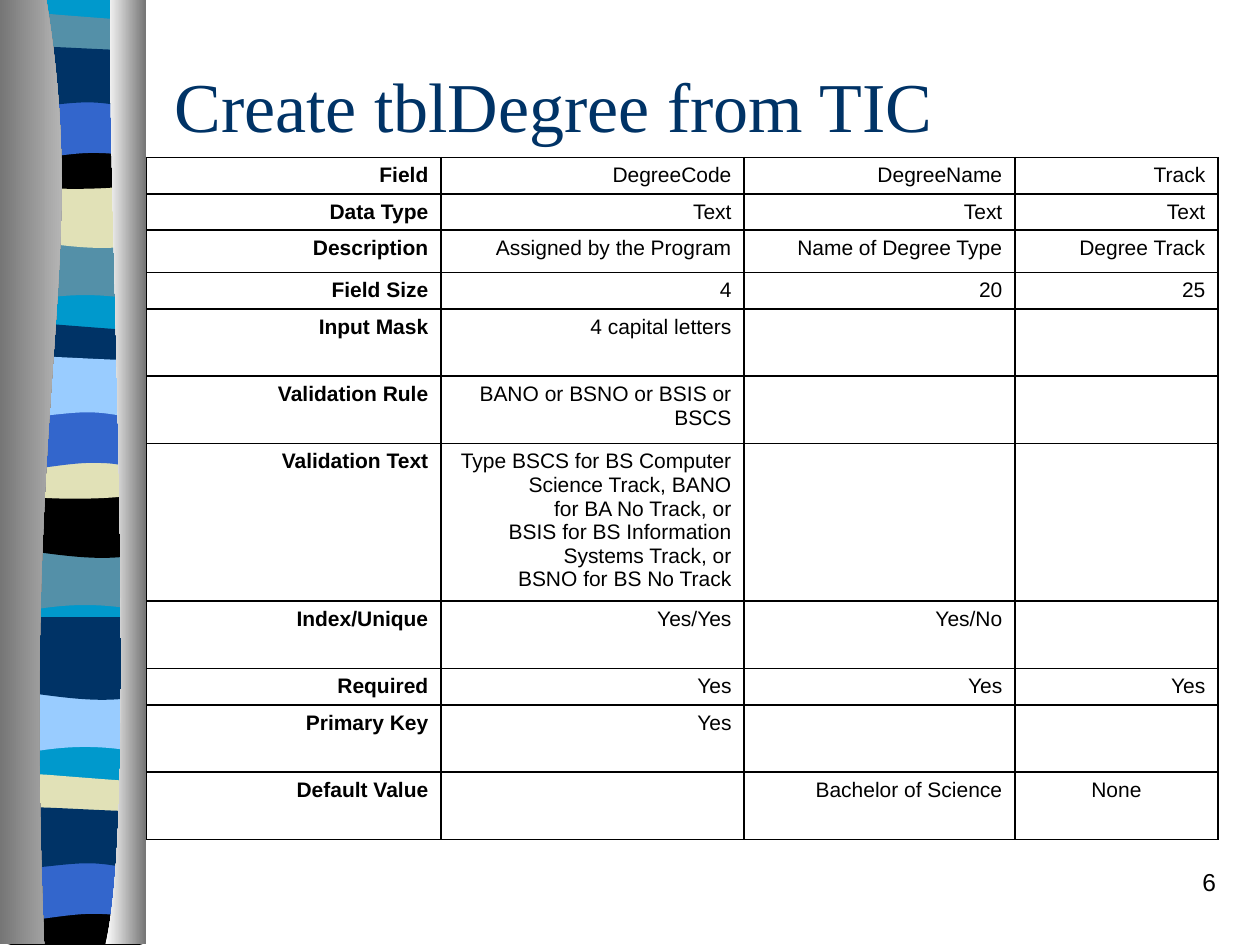
from typing import NamedTuple

from lxml.etree import SubElement
from pptx import Presentation
from pptx.dml.color import RGBColor
from pptx.enum.text import MSO_ANCHOR, MSO_AUTO_SIZE, PP_ALIGN
from pptx.oxml.ns import qn
from pptx.util import Pt

BLACK = RGBColor(0x00, 0x00, 0x00)
WHITE = RGBColor(0xFF, 0xFF, 0xFF)
LIGHT_GREY = RGBColor(0xD3, 0xD3, 0xD3)
GREY = RGBColor(0x76, 0x76, 0x76)
NAVY = RGBColor(0x00, 0x33, 0x66)
BLUE = RGBColor(0x33, 0x66, 0xCC)
SKY = RGBColor(0x99, 0xCC, 0xFF)
CYAN = RGBColor(0x00, 0x99, 0xCC)
TEAL = RGBColor(0x54, 0x90, 0xA8)
CREAM = RGBColor(0xE1, 0xE1, 0xB7)

UNITS_PER_POINT = 100
SHORT_ROW, TALL_ROW = 20.75, 38.5
HANGING = 27

Outline = list[tuple[float, ...]]


class Band(NamedTuple):
    """A wavy band: 2 numbers are a line end, 6 are a cubic curve."""
    outline: Outline
    shifts: tuple[float, ...]
    colours: tuple[RGBColor, ...]


class FieldRow(NamedTuple):
    height: float
    label: str
    code: str = ""
    name: str = ""
    track: str = ""


UPPER_SHIFTS = (0, 177.1, 258.2)
LOWER_SHIFTS = (0, 177.1, 434.8)

BANDS = [
    Band([(82, 133), (82, 172), (50, 166, 30, 169, 4, 174), (4, 133)],
         UPPER_SHIFTS, (TEAL, TEAL, SKY)),
    Band([(82, 94.4), (82, 139.5), (58, 144, 40, 141, 4, 136), (4, 94.4)],
         UPPER_SHIFTS, (CREAM, BLACK, NAVY)),
    Band([(82, 12), (82, 36), (69, 39, 17, 39, 4, 36), (4, 9),
          (9, 7, 21, 7.3, 34, 8.5), (47, 9.5, 72, 11.5, 82, 12)],
         LOWER_SHIFTS, (TEAL, NAVY, CREAM)),
    Band([(82, 77.8), (82, 104.5), (69, 109, 17, 109, 4, 104.5), (4, 77.8),
          (52, 81.4, 65.5, 77.8, 82, 77.8)],
         LOWER_SHIFTS, (BLACK, CREAM, BLACK)),
    Band([(82, 53.3), (82, 93), (70, 88, 65, 87.4, 52, 87.4),
          (39, 87.4, 16, 92, 4, 92.5), (4, 53.3)],
         LOWER_SHIFTS, (BLUE, BLUE, BLUE)),
    Band([(82, 28.8), (82, 61.5), (74, 62.5, 65, 58.5, 50, 58.5),
          (36, 58.5, 16, 62.5, 4, 61.5), (4, 27), (15, 25, 57, 28.8, 82, 28.8)],
         LOWER_SHIFTS, (NAVY, SKY, NAVY)),
]
BACKDROP = [(82, 0), (82, 539), (4, 539), (4, 0)]
LEFT_COLUMN = [(26.5, 0), (52, 156, 12, 213, 25.25, 539.5), (0, 539.5), (0, 0)]
RIGHT_COLUMN = [(63.25, 0), (60.5, 90, 80, 465, 60.25, 539.5), (83.25, 539.5), (83.25, 0)]

COLUMN_WIDTHS = (168.25, 173.25, 154.75, 116)
ROWS = [
    FieldRow(SHORT_ROW, "Field", "DegreeCode", "DegreeName", "Track"),
    FieldRow(SHORT_ROW, "Data Type", "Text", "Text", "Text"),
    FieldRow(24.25, "Description", "Assigned by the Program",
             "Name of Degree Type", "Degree Track"),
    FieldRow(SHORT_ROW, "Field Size", "4", "20", "25"),
    FieldRow(TALL_ROW, "Input Mask", "4 capital letters"),
    FieldRow(TALL_ROW, "Validation Rule", "BANO or BSNO or BSIS or BSCS"),
    FieldRow(88, "Validation Text",
             "Type BSCS for BS Computer Science Track, BANO for BA No Track, or "
             "BSIS for BS Information Systems Track, or BSNO for BS No Track"),
    FieldRow(TALL_ROW, "Index/Unique", "Yes/Yes", "Yes/No"),
    FieldRow(SHORT_ROW, "Required", "Yes", "Yes", "Yes"),
    FieldRow(TALL_ROW, "Primary Key", "Yes"),
    FieldRow(TALL_ROW, "Default Value", "", "Bachelor of Science", "None"),
]


def bend_curves(sp, outline: Outline) -> None:
    """Join each three line ends that stand for a cubic into one curve."""
    lines = iter(list(sp._element.iter(qn("a:lnTo"))))
    for segment in outline[1:]:
        line = next(lines)
        if len(segment) == 2:
            continue
        line.tag = qn("a:cubicBezTo")
        for _ in range(2):
            extra = next(lines)
            line.append(extra[0])
            extra.getparent().remove(extra)


def add_outline(s, outline: Outline, colours: tuple[RGBColor, ...], dy: float = 0) -> None:
    """Draw a closed outline; two colours make a left-to-right gradient."""
    start, *rest = [(segment[i] * UNITS_PER_POINT, (segment[i + 1] + dy) * UNITS_PER_POINT)
                    for segment in outline for i in range(0, len(segment), 2)]
    builder = s.shapes.build_freeform(*start, scale=Pt(1) / UNITS_PER_POINT)
    builder.add_line_segments(rest, close=False)
    builder.add_line_segments([start], close=True)
    sp = builder.convert_to_shape()
    bend_curves(sp, outline)
    sp.shadow.inherit = False
    sp.line.fill.background()
    if len(colours) == 1:
        sp.fill.solid()
        sp.fill.fore_color.rgb = colours[0]
        return
    sp.fill.gradient()
    sp.fill.gradient_angle = 0
    for stop, colour in zip(sp.fill.gradient_stops, colours):
        stop.color.rgb = colour


def add_run(p, text: str, size: float, font: str = "Arial",
            colour: RGBColor = BLACK, bold: bool = False) -> None:
    r = p.add_run()
    r.text = text
    r.font.size = Pt(size)
    r.font.name = font
    r.font.bold = bold
    r.font.color.rgb = colour


def add_borders(cell) -> None:
    tc_pr = cell._tc.get_or_add_tcPr()
    for i, side in enumerate(("a:lnL", "a:lnR", "a:lnT", "a:lnB")):
        ln = tc_pr.makeelement(qn(side), {"w": str(Pt(1))})
        fill = SubElement(ln, qn("a:solidFill"))
        SubElement(fill, qn("a:srgbClr"), val=str(BLACK))
        tc_pr.insert(i, ln)


def fill_cell(cell, text: str, bold: bool) -> None:
    cell.fill.background()
    cell.margin_bottom = Pt(0)
    add_borders(cell)
    if not text:
        return
    p = cell.text_frame.paragraphs[0]
    p.alignment = PP_ALIGN.CENTER if text == "None" else PP_ALIGN.RIGHT
    p.line_spacing = 1.0
    p.space_before = Pt(0)
    p_pr = p._p.get_or_add_pPr()
    p_pr.set("marL", str(Pt(HANGING)))
    p_pr.set("indent", str(Pt(-HANGING)))
    add_run(p, text, 12, bold=bold)


def add_field_table(s) -> None:
    table = s.shapes.add_table(
        len(ROWS), len(COLUMN_WIDTHS), Pt(83.75), Pt(90),
        Pt(sum(COLUMN_WIDTHS)), Pt(sum(row.height for row in ROWS))).table
    table.first_row = table.horz_banding = False
    for column, width in zip(table.columns, COLUMN_WIDTHS):
        column.width = Pt(width)
    for i, (height, *texts) in enumerate(ROWS):
        table.rows[i].height = Pt(height)
        for j, text in enumerate(texts):
            fill_cell(table.cell(i, j), text, bold=j == 0)


def add_title(s, text: str) -> None:
    title = s.shapes.title
    title.left, title.top, title.width, title.height = Pt(92.5), Pt(36), Pt(612), Pt(48)
    tf = title.text_frame
    tf.auto_size = MSO_AUTO_SIZE.NONE
    tf.vertical_anchor = MSO_ANCHOR.MIDDLE
    p = tf.paragraphs[0]
    p.alignment = PP_ALIGN.LEFT
    add_run(p, text, 40, "Times New Roman", NAVY)


def add_page_number(s, number: str) -> None:
    tf = s.shapes.add_textbox(Pt(552), Pt(492), Pt(150), Pt(36)).text_frame
    tf.word_wrap = True
    p = tf.paragraphs[0]
    p.alignment = PP_ALIGN.RIGHT
    add_run(p, number, 14)


def main() -> None:
    prs = Presentation()
    prs.slide_width, prs.slide_height = Pt(720), Pt(540)
    s = prs.slides.add_slide(prs.slide_layouts[5])
    add_outline(s, BACKDROP, (CYAN,))
    for group in range(3):
        for band in BANDS:
            add_outline(s, band.outline, (band.colours[group],), band.shifts[group])
    add_outline(s, LEFT_COLUMN, (GREY, LIGHT_GREY))
    add_outline(s, RIGHT_COLUMN, (WHITE, GREY))
    add_page_number(s, "6")
    add_title(s, "Create tblDegree from TIC")
    add_field_table(s)
    prs.save("out.pptx")


if __name__ == "__main__":
    main()
